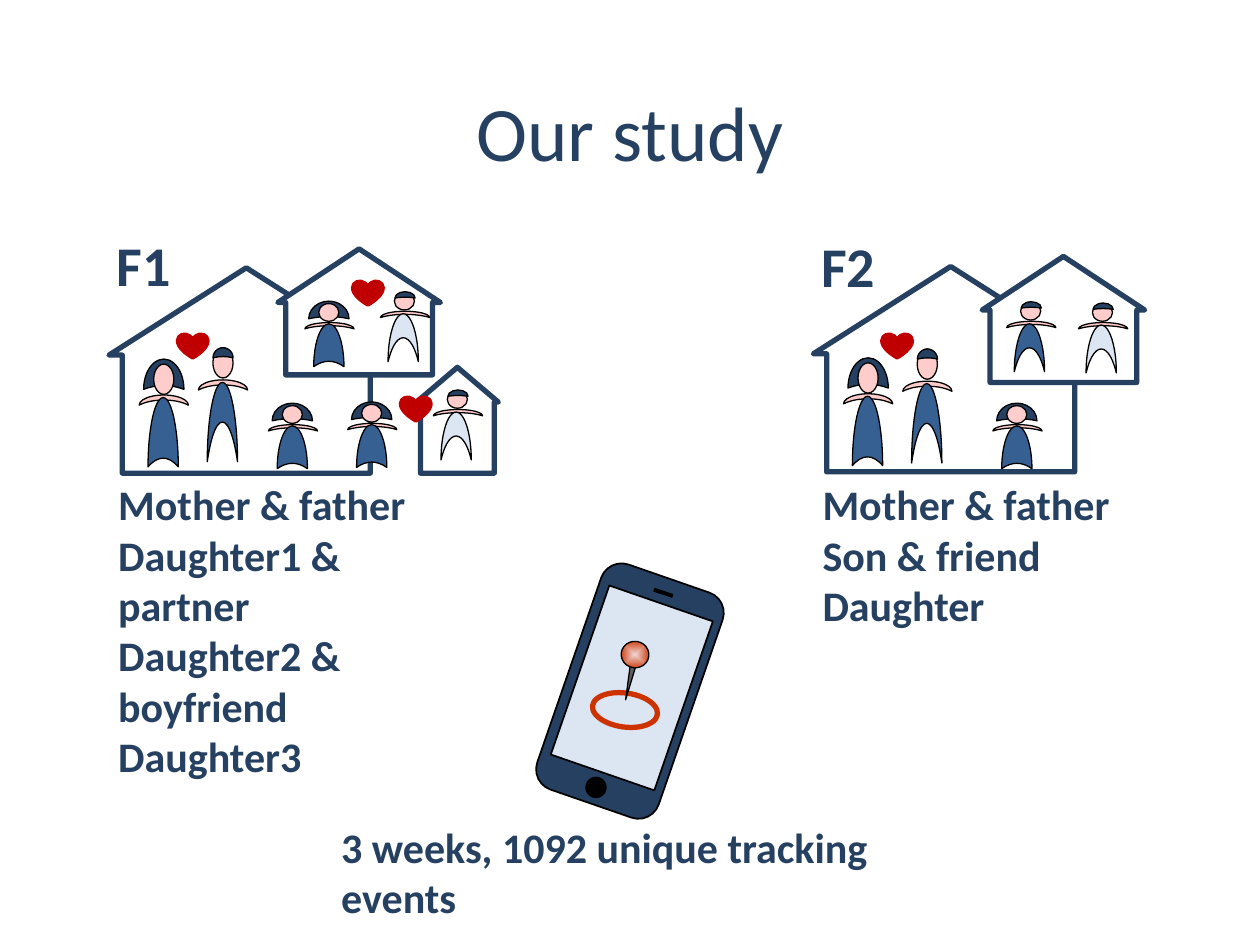
"""Build the slide that sums up the study of two families and their phones."""
from lxml import etree
from pptx import Presentation
from pptx.dml.color import RGBColor
from pptx.enum.shapes import MSO_CONNECTOR, MSO_SHAPE
from pptx.enum.text import MSO_AUTO_SIZE, PP_ALIGN
from pptx.oxml.ns import qn
from pptx.util import Pt

PX = 9144
MOON, OVAL, HEART = MSO_SHAPE.MOON, MSO_SHAPE.OVAL, MSO_SHAPE.HEART
HOUSE, SPIKE = MSO_SHAPE.RIGHT_ARROW, MSO_SHAPE.ISOSCELES_TRIANGLE
PLATE, CASE = MSO_SHAPE.RECTANGLE, MSO_SHAPE.ROUNDED_RECTANGLE
LINE = MSO_CONNECTOR.STRAIGHT
LEFT, CENTER = PP_ALIGN.LEFT, PP_ALIGN.CENTER
GROW = MSO_AUTO_SIZE.SHAPE_TO_FIT_TEXT

HUES = {
    "navy": "254061", "blue": "376092", "pale": "DCE6F2", "skin": "FFCCCC",
    "red": "C00000", "rust": "CC3300", "blush": "EFD5D4", "gray": "5F5F5F",
    "black": "000000", "white": "FFFFFF",
}
INK = {name: RGBColor.from_string(code) for name, code in HUES.items()}


def draw(home, kind, box, fill, line="black", width=0.75, turn=0, bends=()):
    shape = home.shapes.add_shape(kind, *[n * PX for n in box])
    shape.shadow.inherit = False
    shape.rotation = turn
    for i, bend in enumerate(bends):
        shape.adjustments[i] = bend
    if fill:
        shape.fill.solid()
        shape.fill.fore_color.rgb = INK[fill]
    else:
        shape.fill.background()
    shape.line.color.rgb = INK[line]
    shape.line.width = Pt(width)
    return shape


def write(home, box, rows, size, bold=True, align=LEFT, wrap=True):
    frame = home.shapes.add_textbox(*[n * PX for n in box]).text_frame
    frame.word_wrap = wrap
    frame.auto_size = GROW
    for i, row in enumerate(rows):
        para = frame.add_paragraph() if i else frame.paragraphs[0]
        para.alignment = align
        run = para.add_run()
        run.text = row
        run.font.name = "Calibri"
        run.font.size = Pt(size)
        run.font.bold = bold
        run.font.color.rgb = INK["navy"]


# Each part: kind, offset from the head, size, fill (None is the coat), bend
FORMS = {
    "man": [
        (MOON, 4, 10, 8, 39, "skin", 0.5), (OVAL, 0, 0, 16, 24, "skin", None),
        (MOON, 4, -4, 8, 16, "navy", 0.875), (MOON, -24, 47, 63, 24, None, 0.5),
    ],
    "woman": [
        (MOON, -4, -8, 24, 32, "navy", 0.875), (MOON, 4, 9, 8, 39, "skin", 0.5),
        (OVAL, 0, 0, 16, 24, "skin", None), (MOON, -20, 42, 55, 24, None, 0.875),
    ],
    "boy": [
        (MOON, 6, -2, 5, 39, "skin", 0.5), (OVAL, 0, 0, 16, 14, "skin", None),
        (MOON, 6, -6, 5, 16, "navy", 0.875), (MOON, -12, 24, 38, 24, None, 0.5),
    ],
    "girl": [
        (MOON, 1, -11, 14, 32, "navy", 0.875), (MOON, 6, -2, 5, 39, "skin", 0.5),
        (OVAL, 0, 0, 16, 14, "skin", None), (MOON, -9, 21, 34, 24, None, 0.875),
    ],
}

CLANS = [
    {
        "name": "F1", "spot": (83, 178),
        "homes": [(114, 185, 163, 218), (235, 183, 100, 129), (321, 301, 84, 65)],
        "folk": [
            ("man", 169, 276, "blue"), ("woman", 122, 289, "blue"),
            ("boy", 313, 232, "pale"), ("girl", 253, 241, "blue"),
            ("girl", 287, 321, "blue"), ("girl", 224, 322, "blue"),
            ("boy", 355, 310, "pale"),
        ],
        "hearts": [(141, 265), (280, 223), (318, 315)],
    },
    {
        "name": "F2", "spot": (642, 179),
        "homes": [(673, 184, 163, 218), (794, 189, 100, 129)],
        "folk": [
            ("man", 728, 277, "blue"), ("woman", 681, 288, "blue"),
            ("girl", 799, 322, "blue"), ("boy", 810, 240, "blue"),
            ("boy", 867, 241, "pale"),
        ],
        "hearts": [(700, 265)],
    },
]

deck = Presentation()
deck.slide_width, deck.slide_height = 1000 * PX, 750 * PX
slide = deck.slides.add_slide(deck.slide_layouts[6])

write(slide, (0, 62, 1000, 84), ["Our study"], 44, False, CENTER)

for clan in CLANS:
    group = slide.shapes.add_group_shape()
    for box in clan["homes"]:
        draw(group, HOUSE, box, "white", "navy", 3, 270, (0.903, 0.425))
    for form, x, y, coat in clan["folk"]:
        for kind, dx, dy, w, h, fill, bend in FORMS[form]:
            turn, bends = (90, (bend,)) if bend else (0, ())
            draw(group, kind, (x + dx, y + dy, w, h), fill or coat, turn=turn, bends=bends)
    for x, y in clan["hearts"]:
        draw(group, HEART, (x, y, 24, 19), "red", "red", 2)
    write(group, (*clan["spot"], 65, 64), [clan["name"]], 32, wrap=False)

phone = slide.shapes.add_group_shape()
TILT, LEAN = 19.1, 7.7
draw(phone, CASE, (449, 454, 102, 189), "navy", width=1, turn=TILT, bends=(0.167,))
draw(phone, PLATE, (458, 475, 87, 142), "pale", width=1, turn=TILT)
draw(phone, OVAL, (465, 617, 16, 16), "black", turn=TILT)
slot = phone.shapes.add_connector(LINE, 519 * PX, 468 * PX, 534 * PX, 473 * PX)
slot.line.color.rgb = INK["black"]
slot.line.width = Pt(2.25)
etree.SubElement(slot.element.spPr, qn("a:effectLst"))

draw(phone, OVAL, (470, 550, 52, 27), None, "rust", 3, LEAN)
pin = draw(phone, SPIKE, (499, 519, 6, 37), "gray", turn=LEAN, bends=(1,))
for flip in ("flipH", "flipV"):
    pin.element.spPr.find(qn("a:xfrm")).set(flip, "1")
knob = draw(phone, OVAL, (493, 509, 22, 21), "rust", turn=LEAN)
knob.fill.gradient()
for stop, hue in zip(knob.fill.gradient_stops, ("blush", "rust")):
    stop.color.rgb = INK[hue]
blend = knob.element.spPr.find(qn("a:gradFill"))
old = blend.find(qn("a:lin"))
glow = etree.Element(qn("a:path"), {"path": "shape"})
etree.SubElement(glow, qn("a:fillToRect"), {side: "50000" for side in "ltrb"})
blend.replace(old, glow)

write(slide, (84, 375, 307, 172), [
    "Mother & father", "Daughter1 & partner", "Daughter2 & boyfriend", "Daughter3",
], 24)
write(slide, (643, 375, 307, 131), ["Mother & father", "Son & friend", "Daughter"], 24)
write(slide, (261, 647, 478, 50), ["3 weeks, 1092 unique tracking events"], 24)

deck.save("out.pptx")
